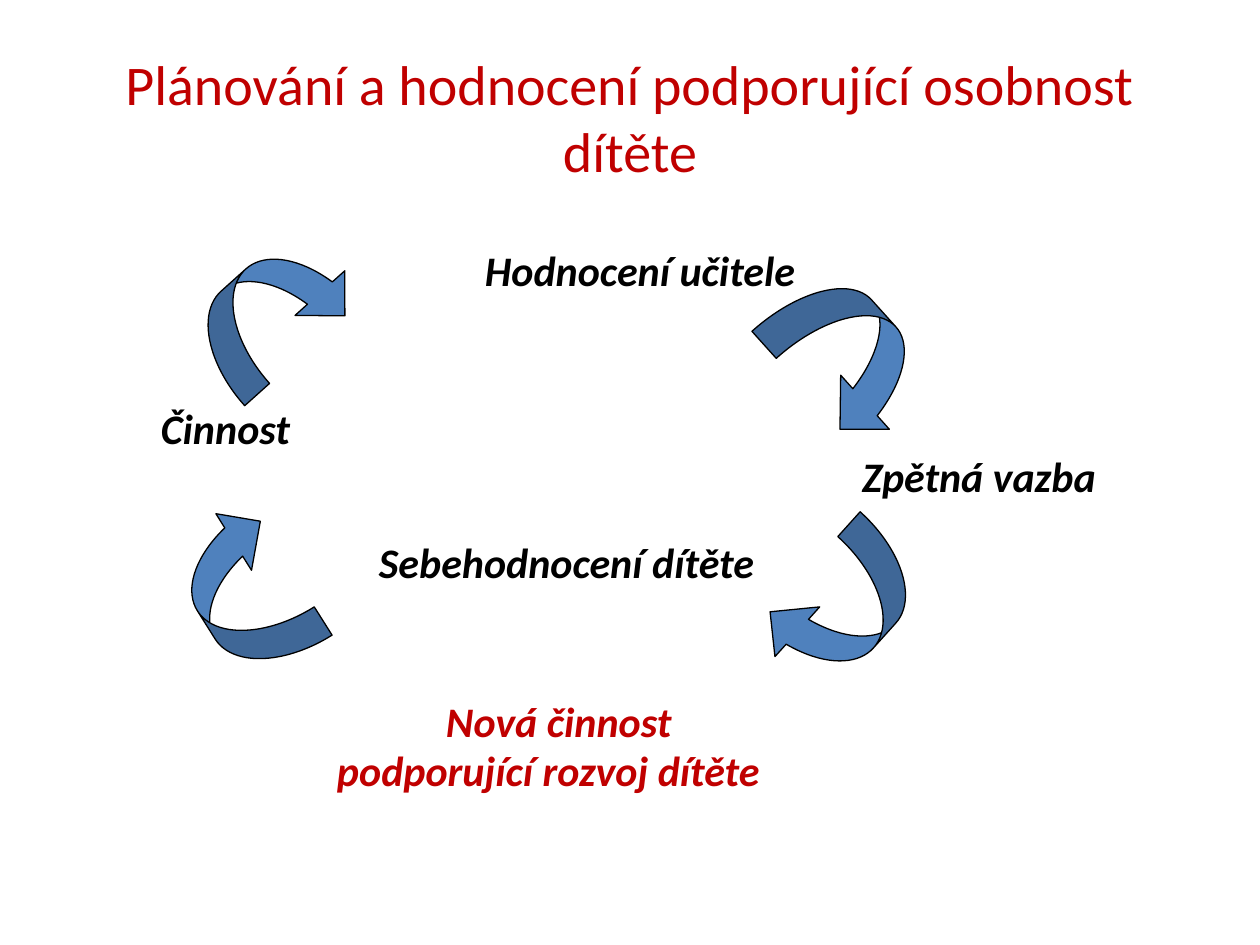
from pptx import Presentation
from pptx.dml.color import RGBColor
from pptx.enum.shapes import MSO_SHAPE as Shape
from pptx.enum.text import MSO_ANCHOR as Anchor, PP_ALIGN as Align
from pptx.util import Pt

PX = 914400 / 126
RED, BLACK, BLUE = "C00000", "000000", "4F81BD"
TITLE = "Plánování a hodnocení podporující osobnost dítěte"
LABEL_HEIGHT = 52

# text, left, top, width, colour; positions are relative to the cycle's box
STAGES = [
    ("Hodnocení učitele", 422, 0, 330, BLACK),
    ("Činnost", 98, 158, 150, BLACK),
    ("Zpětná vazba", 799, 206, 260, BLACK),
    ("Sebehodnocení dítěte", 316, 292, 400, BLACK),
    ("Nová činnost", 383, 451, 250, RED),
    ("podporující rozvoj dítěte", 274, 500, 450, RED),
]
# left, top, width, rotation
ARROWS = [
    (160, -17, 101, 228.1),
    (731, 28, 110, 318),
    (131, 262, 101, 147.8),
    (728, 279, 101, 42),
]
ARROW_HEIGHT = 168
ARROW_SHAPE = (0.331, 0.662, 0.333)


def px(*lengths):
    return [round(length * PX) for length in lengths]


def color(value):
    return RGBColor.from_string(value)


def set_title(slide, left, top, width, height):
    title = slide.shapes.title
    title.left, title.top, title.width, title.height = px(left, top, width, height)
    frame = title.text_frame
    frame.text = TITLE
    frame.vertical_anchor = Anchor.MIDDLE
    heading = frame.paragraphs[0]
    heading.alignment = Align.CENTER
    heading.font.name, heading.font.size = "Calibri", Pt(32)
    heading.font.color.rgb = color(RED)


def add_stage(slide, text, left, top, width, ink):
    frame = slide.shapes.add_textbox(*px(left, top, width, LABEL_HEIGHT)).text_frame
    frame.word_wrap = True
    frame.margin_left = frame.margin_right = frame.margin_top = frame.margin_bottom = 0
    frame.text = text
    stage = frame.paragraphs[0]
    stage.font.name, stage.font.size = "Calibri", Pt(24)
    stage.font.bold = stage.font.italic = True
    stage.font.color.rgb = color(ink)


def add_arrow(slide, left, top, width, rotation):
    arrow = slide.shapes.add_shape(
        Shape.CURVED_LEFT_ARROW, *px(left, top, width, ARROW_HEIGHT))
    for index, value in enumerate(ARROW_SHAPE):
        arrow.adjustments[index] = value
    arrow.rotation = rotation
    arrow.shadow.inherit = False
    arrow.fill.solid()
    arrow.fill.fore_color.rgb = color(BLUE)
    arrow.line.color.rgb = color(BLACK)
    arrow.line.width = Pt(0.75)


def add_cycle(slide, left, top):
    for text, x, y, width, ink in STAGES:
        add_stage(slide, text, left + x, top + y, width, ink)
    for x, y, width, rotation in ARROWS:
        add_arrow(slide, left + x, top + y, width, rotation)


def main():
    deck = Presentation()
    deck.slide_width, deck.slide_height = px(1260, 945)
    slide = deck.slides.add_slide(deck.slide_layouts[5])
    set_title(slide, 63, 38, 1134, 158)
    add_cycle(slide, 63, 245)
    deck.save("out.pptx")


if __name__ == "__main__":
    main()
